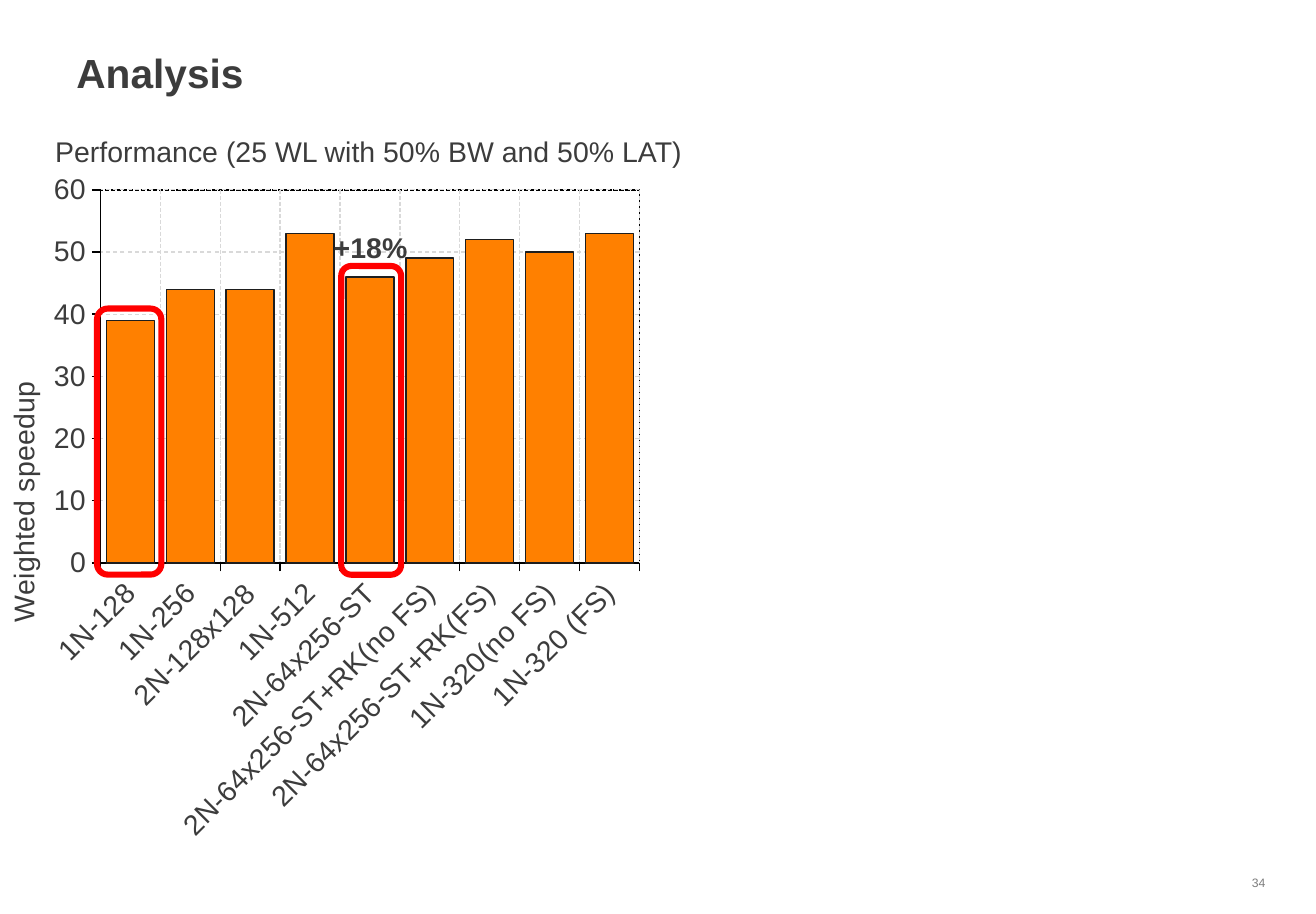
from lxml.etree import SubElement
from pptx import Presentation
from pptx.chart.data import CategoryChartData
from pptx.dml.color import RGBColor
from pptx.enum.chart import XL_CHART_TYPE, XL_TICK_MARK
from pptx.enum.dml import MSO_LINE
from pptx.enum.shapes import MSO_SHAPE
from pptx.enum.text import MSO_ANCHOR, PP_ALIGN
from pptx.oxml import parse_xml
from pptx.oxml.ns import nsdecls, qn
from pptx.util import Pt

FONT, INK = "Arial", "3C3C3C"
SPEEDUP = {
    "1N-128": 39,
    "1N-256": 44,
    "2N-128x128": 44,
    "1N-512": 53,
    "2N-64x256-ST": 46,
    "2N-64x256-ST+RK(no FS)": 49,
    "2N-64x256-ST+RK(FS)": 52,
    "1N-320(no FS)": 50,
    "1N-320 (FS)": 53,
}


def rgb(code):
    return RGBColor.from_string(code)


def place(shape, box):
    shape.left, shape.top, shape.width, shape.height = map(Pt, box)


def write(frame, text, size=14, color=INK, bold=False, align=PP_ALIGN.LEFT,
          space=0.9, inset=(7.2, 3.6)):
    frame.word_wrap = True
    frame.vertical_anchor = MSO_ANCHOR.TOP
    frame.margin_left = frame.margin_right = Pt(inset[0])
    frame.margin_top = frame.margin_bottom = Pt(inset[1])
    par = frame.paragraphs[0]
    par.alignment, par.line_spacing = align, space
    run = par.add_run()
    run.text = text
    style(run.font, size, color, bold)


def style(font, size=14, color=INK, bold=False):
    font.name, font.size, font.bold = FONT, Pt(size), bold
    font.color.rgb = rgb(color)


def label(slide, box, text, **form):
    shape = slide.shapes.add_textbox(*map(Pt, box))
    write(shape.text_frame, text, **form)


def stroke(line, color, width, dash=None):
    line.color.rgb = rgb(color)
    line.width = Pt(width)
    if dash:
        line.dash_style = dash


def layout(**parts):
    """Manual chart layout, with positions as fractions of the chart."""
    node = parse_xml(f"<c:layout {nsdecls('c')}><c:manualLayout/></c:layout>")
    if "w" in parts:
        SubElement(node[0], qn("c:layoutTarget")).set("val", "inner")
    for key in ("x", "y"):
        SubElement(node[0], qn(f"c:{key}Mode")).set("val", "edge")
    for key, val in parts.items():
        SubElement(node[0], qn(f"c:{key}")).set("val", str(val))
    return node


def set_layout(host, index, node):
    for old in host.findall(qn("c:layout")):
        host.remove(old)
    host.insert(index, node)


def set_axis(axis, width, dash):
    axis.major_tick_mark = XL_TICK_MARK.OUTSIDE
    axis.minor_tick_mark = XL_TICK_MARK.NONE
    stroke(axis.format.line, "000000", 0.75)
    axis.has_major_gridlines = True
    stroke(axis.major_gridlines.format.line, "D9D9D9", width, dash)
    style(axis.tick_labels.font)


def bar_chart(slide, box):
    wide, high = box[2:]
    data = CategoryChartData()
    data.categories = list(SPEEDUP)
    data.add_series("Series 1", list(SPEEDUP.values()))
    chart = slide.shapes.add_chart(
        XL_CHART_TYPE.COLUMN_CLUSTERED, *map(Pt, box), data).chart
    chart.has_legend = chart.has_title = False
    style(chart.font)

    plot = chart.plots[0]
    plot.gap_width, plot.vary_by_categories = 25, False
    bars = plot.series[0].format
    bars.fill.solid()
    bars.fill.fore_color.rgb = rgb("FF8000")
    stroke(bars.line, "1E1E1E", 0.75)

    cat, val = chart.category_axis, chart.value_axis
    set_axis(cat, 0.75, MSO_LINE.SQUARE_DOT)
    set_axis(val, 0.5, MSO_LINE.DASH)
    val.minimum_scale, val.maximum_scale, val.major_unit = 0, 60, 10
    cat._element.find(f"{qn('c:txPr')}/{qn('a:bodyPr')}").set("rot", "-2700000")

    frame = val.axis_title.text_frame
    run = frame.paragraphs[0].add_run()
    run.text = "Weighted speedup"
    style(run.font)
    frame._txBody.bodyPr.set("rot", "-5400000")
    frame._txBody.bodyPr.set("vert", "horz")
    set_layout(val.axis_title._element, 1, layout(x=0, y=0.3))

    area = chart._chartSpace.chart.plotArea
    set_layout(area, 0, layout(x=49.5 / wide, y=12.9 / high,
                               w=265.4 / wide, h=183.7 / high))
    area.append(parse_xml(
        f"<c:spPr {nsdecls('c', 'a')}><a:noFill/><a:ln w='9525'><a:solidFill>"
        "<a:srgbClr val='000000'/></a:solidFill><a:prstDash val='sysDash'/>"
        "</a:ln></c:spPr>"))


def mark(slide, box):
    """Red frame round one bar."""
    shape = slide.shapes.add_shape(MSO_SHAPE.ROUNDED_RECTANGLE, *map(Pt, box))
    shape.shadow.inherit = False
    shape.fill.background()
    stroke(shape.line, "FF0000", 3)


def results(slide, box):
    """Chart with its heading and marked bars."""
    x, y, w, h = box
    bar_chart(slide, box)
    mark(slide, (x + 168, y + 50.4, 29.5, 152))
    mark(slide, (x + 47.8, y + 71.3, 31.7, 131))
    label(slide, (x + 152, y + 31, 61, 23), "+18%", bold=True,
          align=PP_ALIGN.CENTER)
    label(slide, (x + 17, y - 16, w + 6, 23),
          "Performance (25 WL with 50% BW and 50% LAT)",
          align=PP_ALIGN.CENTER)


def main():
    deck = Presentation()
    deck.slide_width, deck.slide_height = Pt(648), Pt(450)
    slide = deck.slides.add_slide(deck.slide_layouts[5])
    title = slide.shapes.title
    place(title, (32.6, 23.5, 583.2, 31))
    write(title.text_frame, "Analysis", size=20, bold=True, inset=(5, 2.9))
    results(slide, (0, 80.6, 323.3, 348.5))
    label(slide, (611.5, 428.8, 21.6, 12.2), "34", size=6, color="7D7D7D",
          space=0.95, inset=(5, 2.9))
    deck.save("out.pptx")


if __name__ == "__main__":
    main()
